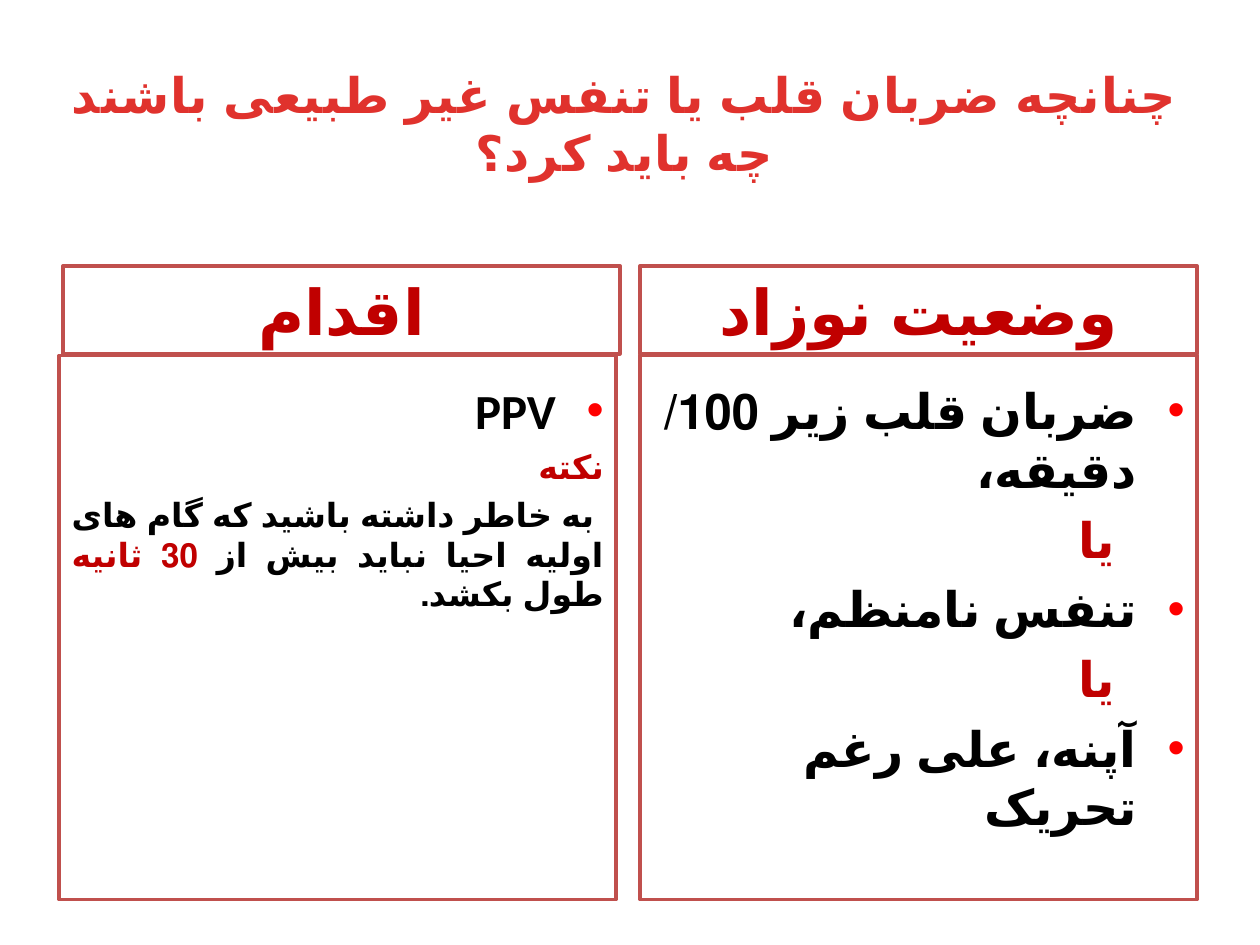
from dataclasses import dataclass

from lxml import etree
from pptx import Presentation
from pptx import util as u
from pptx.dml.color import RGBColor
from pptx.enum import lang, text
from pptx.oxml.ns import qn


@dataclass(frozen=True)
class Theme:
    font: str = "Calibri"
    paper: str = "FFFFFF"
    ink: str = "000000"
    title: str = "E0322D"
    accent: str = "C00000"
    bullet: str = "FF0000"
    border: str = "C0504D"
    header_size: int = 36
    main_size: int = 28
    note_size: int = 19


RIGHT, CENTER, JUSTIFY = (
    text.PP_ALIGN.RIGHT, text.PP_ALIGN.CENTER, text.PP_ALIGN.JUSTIFY)


class SlideBuilder:
    def __init__(self, slide, theme):
        self.slide = slide
        self.theme = theme

    def fill_para(self, para, spans, size, align, margin=0, bullet=False):
        """Fill a right-to-left paragraph with (text, colour) spans."""
        para.alignment = align
        para.space_before = u.Pt(round(size * 0.22, 1))
        properties = para._p.get_or_add_pPr()
        properties.set("rtl", "1")
        properties.set("marL", str(u.Inches(margin)))
        properties.set("indent", str(u.Inches(-margin if bullet else 0)))
        if bullet:
            colour = etree.SubElement(properties, qn("a:buClr"))
            etree.SubElement(colour, qn("a:srgbClr"), val=self.theme.bullet)
            etree.SubElement(properties, qn("a:buFont"), typeface="Arial")
            etree.SubElement(properties, qn("a:buChar"), char="•")
        else:
            etree.SubElement(properties, qn("a:buNone"))
        for words, colour in spans:
            span = para.add_run()
            span.text = words
            span.font.name = self.theme.font
            span.font.size = u.Pt(size)
            span.font.bold = True
            span.font.language_id = lang.MSO_LANGUAGE_ID.FARSI
            span.font.color.rgb = RGBColor.from_string(colour)

    def title(self, words, left, top, width, height):
        box = self.slide.shapes.title
        box.left, box.top = u.Inches(left), u.Inches(top)
        box.width, box.height = u.Inches(width), u.Inches(height)
        frame = box.text_frame
        frame.word_wrap = True
        frame.vertical_anchor = text.MSO_ANCHOR.MIDDLE
        para = frame.paragraphs[0]
        self.fill_para(para, [(words, self.theme.title)],
                       self.theme.main_size, CENTER)
        para.space_before = u.Pt(0)
        para.runs[0].font._element.set("spc", "50")

    def panel(self, left, top, width, height):
        """Add a bordered text box and return its text frame."""
        box = self.slide.shapes.add_textbox(
            u.Inches(left), u.Inches(top), u.Inches(width), u.Inches(height))
        box.fill.solid()
        box.fill.fore_color.rgb = RGBColor.from_string(self.theme.paper)
        box.line.color.rgb = RGBColor.from_string(self.theme.border)
        box.line.width = u.Pt(2)
        box.text_frame.word_wrap = True
        return box.text_frame

    def header(self, words, left, top, width, height):
        frame = self.panel(left, top, width, height)
        frame.vertical_anchor = text.MSO_ANCHOR.BOTTOM
        self.fill_para(frame.paragraphs[0], [(words, self.theme.accent)],
                       self.theme.header_size, CENTER)

    def body(self, entries, left, top, width, height):
        frame = self.panel(left, top, width, height)
        frame.margin_top = u.Inches(0.2)
        for index, entry in enumerate(entries):
            para = frame.add_paragraph() if index else frame.paragraphs[0]
            self.fill_para(para, **entry)


def main():
    theme = Theme()
    deck = Presentation()
    deck.slide_width, deck.slide_height = u.Inches(10), u.Inches(7.5)
    page = SlideBuilder(deck.slides.add_slide(deck.slide_layouts[5]), theme)

    def item(words):
        return dict(spans=[(words, theme.ink)], size=theme.main_size,
                    align=RIGHT, margin=0.38, bullet=True)

    either = dict(spans=[("یا", theme.accent)], size=theme.main_size,
                  align=RIGHT, margin=0.55)
    conditions = [item("ضربان قلب زیر 100/ دقیقه،"), either,
                  item("تنفس نامنظم،"), either,
                  item("آپنه، علی رغم تحریک")]
    actions = [
        item("PPV"),
        dict(spans=[("نکته", theme.accent)], size=theme.note_size,
             align=RIGHT),
        dict(spans=[
            (" به خاطر داشته باشید که گام های اولیه احیا نباید بیش از ",
             theme.ink),
            ("30 ثانیه ", theme.accent),
            ("طول بکشد. ", theme.ink)],
            size=theme.note_size, align=JUSTIFY),
    ]

    page.title("چنانچه ضربان قلب یا تنفس غیر طبیعی باشند چه باید کرد؟",
               0.41, 0.25, 9.09, 1.45)
    columns = [("وضعیت نوزاد", 5.08, conditions, 5.08),
               ("اقدام", 0.5, actions, 0.47)]
    for heading, heading_left, entries, body_left in columns:
        page.header(heading, heading_left, 2.11, 4.42, 0.7)
        page.body(entries, body_left, 2.82, 4.42, 4.32)

    deck.save("out.pptx")


if __name__ == "__main__":
    main()
